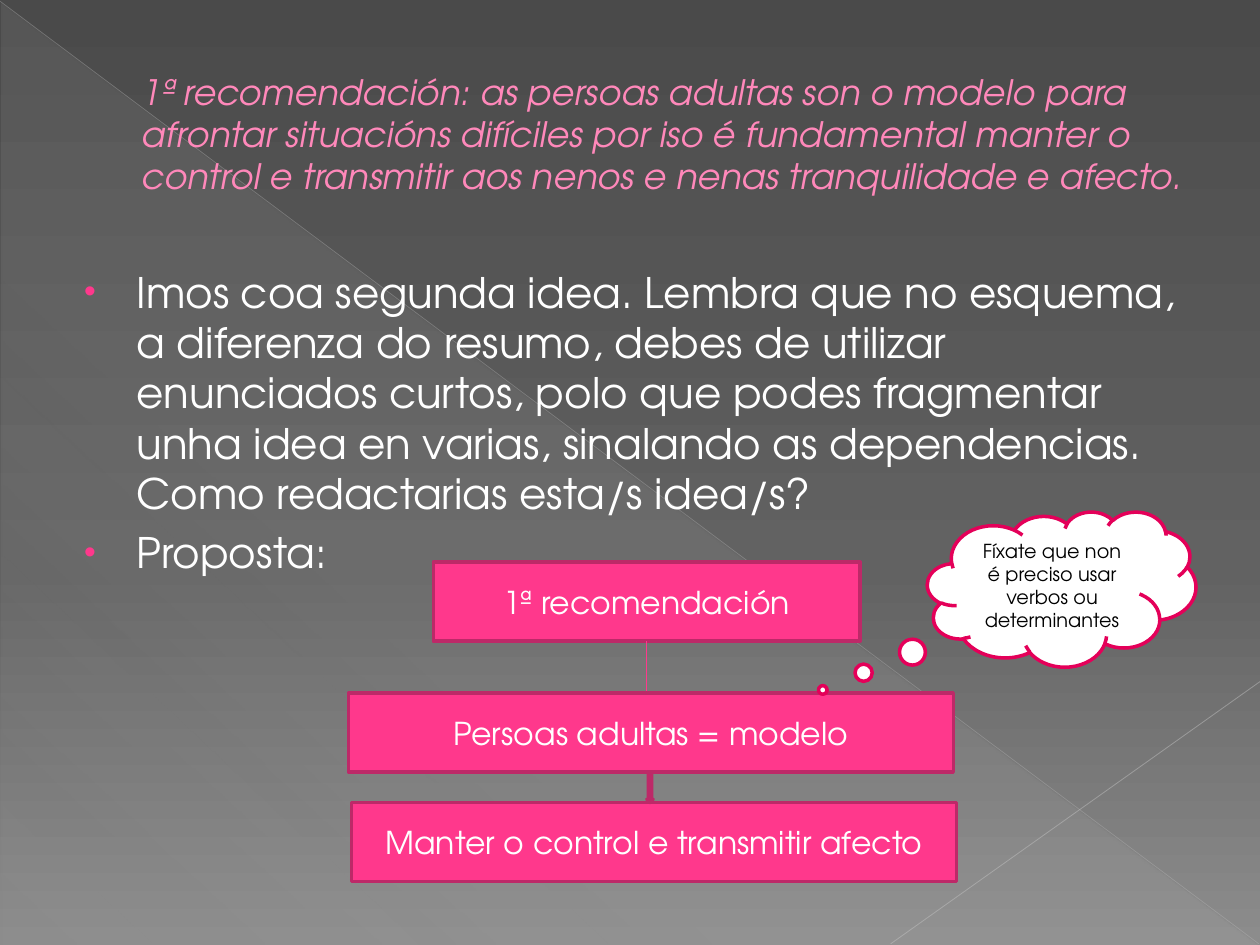
from pptx import Presentation
from pptx.dml.color import RGBColor
from pptx.enum.shapes import MSO_CONNECTOR as Connector, MSO_SHAPE as Shape
from pptx.enum.text import MSO_ANCHOR as Anchor, PP_ALIGN as Align
from pptx.oxml.ns import qn
from pptx.util import Pt
from lxml.etree import SubElement

FONT = "TeX Gyre Adventor"
PINK, DARK_PINK, WHITE = "FF388C", "BD2968", "FFFFFF"


def color(value):
    """Turn a hex string into a colour."""
    return RGBColor.from_string(value)


def add_node(parent, tag, **attributes):
    """Append a drawing element with the given attributes."""
    return SubElement(parent, qn(tag), {key: str(value) for key, value in attributes.items()})


def set_gradient(fill, element, angle, stops):
    """Fill with (position, colour, opacity) stops, angle clockwise in degrees."""
    fill.gradient()
    fill.gradient_angle = 360 - angle
    stop_list = element.find(".//" + qn("a:gsLst"))
    for old in list(stop_list):
        stop_list.remove(old)
    for position, value, opacity in stops:
        stop = add_node(stop_list, "a:gs", pos=position * 1000)
        tint = add_node(stop, "a:srgbClr", val=value)
        if opacity < 100:
            add_node(tint, "a:alpha", val=opacity * 1000)


class SlideBuilder:
    """Hold the style and the current slide."""

    def __init__(self, page):
        """Keep the page to draw on."""
        self.page = page

    def style(self, paragraph, size, value, italic=False):
        """Format the runs of a paragraph."""
        for span in paragraph.runs:
            span.font.name = FONT
            span.font.size = Pt(size)
            span.font.italic = italic
            span.font.color.rgb = color(value)

    def text_box(self, left, top, width, height, anchor):
        """Add an empty wrapping text box and return its frame."""
        box = self.page.shapes.add_textbox(Pt(left), Pt(top), Pt(width), Pt(height))
        frame = box.text_frame
        frame.word_wrap = True
        frame.vertical_anchor = anchor
        return frame

    def title(self, text, *place):
        """Add the indented italic title with outlined letters."""
        paragraph = self.text_box(*place, Anchor.MIDDLE).paragraphs[0]
        paragraph.text = text
        paragraph._p.get_or_add_pPr().set("marL", str(Pt(38)))
        self.style(paragraph, 20, "FF88BA", italic=True)
        for span in paragraph.runs:
            properties = span._r.get_or_add_rPr()
            outline = add_node(properties, "a:ln", w=Pt(0.5))
            add_node(add_node(outline, "a:solidFill"), "a:srgbClr", val="B12761")
            properties.insert(0, outline)

    def bullets(self, texts, *place):
        """Add a bulleted list."""
        frame = self.text_box(*place, Anchor.TOP)
        frame.text = "\n".join(texts)
        for index, paragraph in enumerate(frame.paragraphs):
            properties = paragraph._p.get_or_add_pPr()
            properties.set("marL", str(Pt(35)))
            properties.set("indent", str(Pt(-30)))
            add_node(add_node(properties, "a:buClr"), "a:srgbClr", val=PINK)
            add_node(properties, "a:buSzPct", val=80000)
            add_node(properties, "a:buFont", typeface="Arial")
            add_node(properties, "a:buChar", char="•")
            if index:
                paragraph.space_before = Pt(4.8)
            self.style(paragraph, 24, WHITE)

    def shape(self, kind, left, top, width, height, fill=PINK, line=DARK_PINK,
              text="", size=18, ink=WHITE):
        """Add a filled, outlined shape with centred text."""
        shape = self.page.shapes.add_shape(kind, Pt(left), Pt(top), Pt(width), Pt(height))
        shape.shadow.inherit = False
        shape.fill.solid()
        shape.fill.fore_color.rgb = color(fill)
        shape.line.color.rgb = color(line)
        shape.line.width = Pt(2)
        if text:
            frame = shape.text_frame
            frame.text = text
            frame.word_wrap = True
            frame.vertical_anchor = Anchor.MIDDLE
            frame.paragraphs[0].alignment = Align.CENTER
            self.style(frame.paragraphs[0], size, ink)
        return shape

    def line(self, start, end, value, width, opacity=100):
        """Add a straight line, optionally translucent."""
        line = self.page.shapes.add_connector(
            Connector.STRAIGHT, *map(Pt, (*start, *end)))
        line.line.color.rgb = color(value)
        line.line.width = Pt(width)
        properties = line._element.spPr
        if opacity < 100:
            tint = properties.find(".//" + qn("a:srgbClr"))
            add_node(tint, "a:alpha", val=opacity * 1000)
        add_node(properties, "a:effectLst")

    def backdrop(self):
        """Draw the shaded background with its triangle and diagonals."""
        set_gradient(self.page.background.fill, self.page.element, 90,
                     [(0, "4A4A4A", 100), (60, "626262", 100), (100, "8C8C8C", 100)])
        triangle = self.shape(Shape.RIGHT_TRIANGLE, 0.7, 1.4, 718.6, 538.6)
        triangle.line.fill.background()
        set_gradient(triangle.fill, triangle._element, 133,
                     [(0, "D2D2D2", 10), (70, "D2D2D2", 8), (100, "D2D2D2", 1)])
        self.line((0, 0.7), (719.3, 539.3), "BFBFBF", 0.39, 35)
        self.line((720, 389.5), (509, 539.3), "C6C6C6", 0.47, 45)


def main():
    """Build the slide and save the deck."""
    deck = Presentation()
    deck.slide_width, deck.slide_height = Pt(720), Pt(540)
    builder = SlideBuilder(deck.slides.add_slide(deck.slide_layouts[6]))
    builder.backdrop()
    builder.title("1ª recomendación: as persoas adultas son o modelo para afrontar "
                  "situacións difíciles por iso é fundamental manter o control e "
                  "transmitir aos nenos e nenas tranquilidade e afecto.",
                  36, 21, 648, 110)
    builder.bullets(["Imos coa segunda idea. Lembra que no esquema, a diferenza do resumo, "
                     "debes de utilizar enunciados curtos, polo que podes fragmentar unha "
                     "idea en varias, sinalando as dependencias. Como redactarias esta/s "
                     "idea/s?", "Proposta:"], 36, 148.5, 648, 360)
    for text, left, top, width in (
            ("1ª recomendación", 247.6, 321.2, 244),
            ("Persoas adultas = modelo", 199.2, 396, 345.6),
            ("Manter o control e transmitir afecto", 201, 458.6, 345.6)):
        builder.shape(Shape.RECTANGLE, left, top, width, 45.2, text=text)
    builder.line((369.6, 366.4), (369.6, 394.6), PINK, 0.75)
    builder.shape(Shape.DOWN_ARROW, 369.6, 441.3, 3.6, 17.3)
    cloud = builder.shape(Shape.CLOUD_CALLOUT, 530, 292.4, 153.4, 88.6, WHITE, "E40059",
                          "Fíxate que non é preciso usar verbos ou determinantes",
                          11, "000000")
    cloud.adjustments[0], cloud.adjustments[1] = -0.89, 0.65
    deck.save("out.pptx")


if __name__ == "__main__":
    main()
